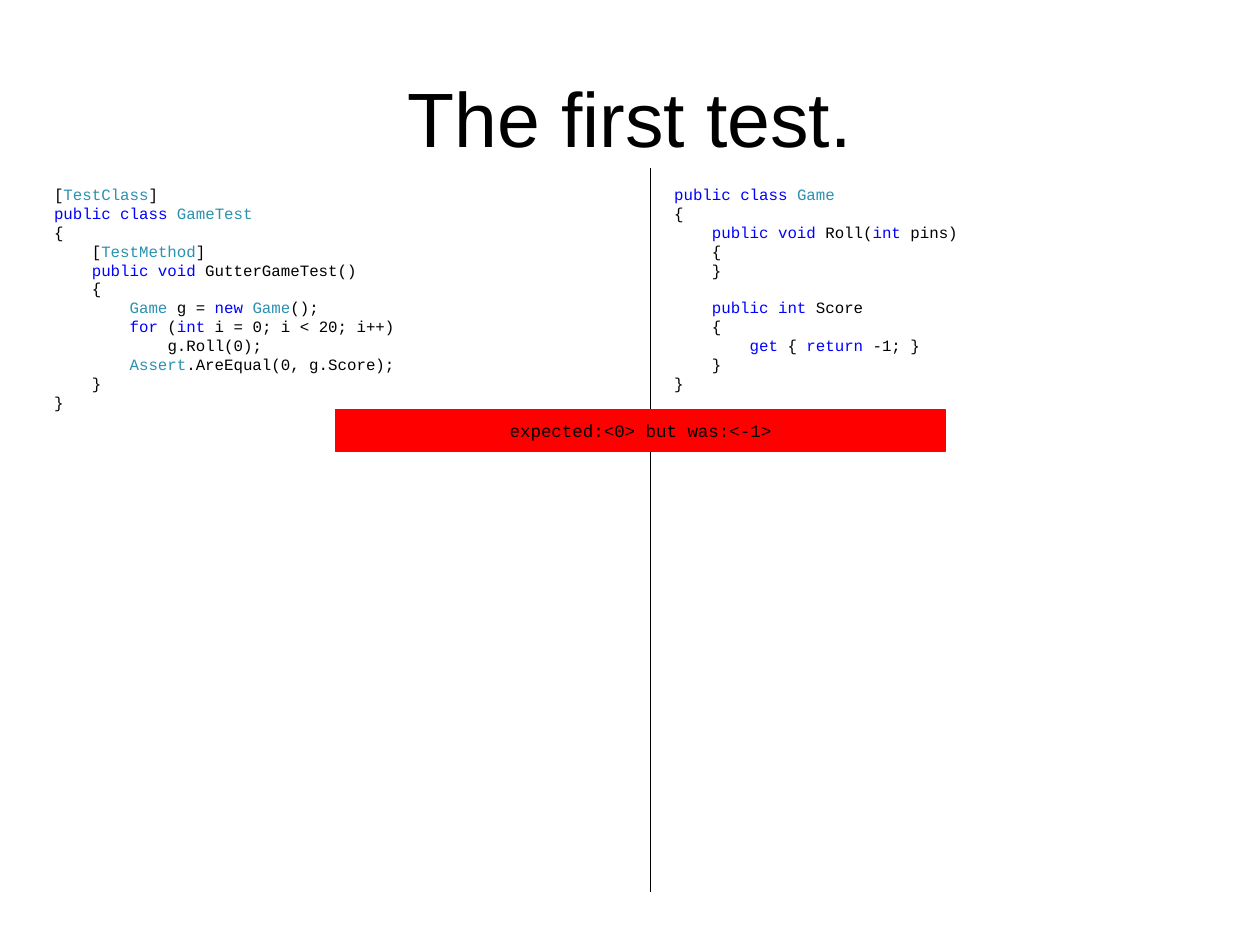
from lxml.etree import SubElement
from pptx import Presentation
from pptx.dml.color import RGBColor
from pptx.enum.shapes import MSO_CONNECTOR, MSO_SHAPE
from pptx.enum.text import MSO_ANCHOR, PP_ALIGN
from pptx.oxml.ns import qn
from pptx.util import Cm, Pt

COLORS = {"text": "000000", "keyword": "0000FF", "type": "2B91AF", "fail": "FF0000"}
KINDS = dict.fromkeys(["public", "class", "void", "int", "new", "for", "get", "return"], "keyword")
KINDS.update(dict.fromkeys(["TestClass", "GameTest", "TestMethod", "Game", "Assert"], "type"))

TEST_CODE = """[|TestClass|]
|public| |class| |GameTest
{
    [|TestMethod|]
    |public| |void| GutterGameTest()
    {
        |Game| g = |new| |Game|();
        |for| (|int| i = 0; i < 20; i++)
            g.Roll(0);
        |Assert|.AreEqual(0, g.Score);
    }
}"""
GAME_CODE = """public| |class| |Game
{
    |public| |void| Roll(|int| pins)
    {
    }

    |public| |int| Score
    {
        |get| { |return| -1; }
    }
}"""
LINE_PITCH = Pt(10.8)


def add_run(p, text, font, size, color="text"):
    r = p.add_run()
    r.text = text
    r.font.name = font
    r.font.size = Pt(size)
    r.font.color.rgb = RGBColor.from_string(COLORS[color])


prs = Presentation()
prs.slide_width, prs.slide_height = Cm(25.4), Cm(19.05)
s = prs.slides.add_slide(prs.slide_layouts[6])

tf = s.shapes.add_textbox(Cm(1.27), Cm(0.76), Cm(22.86), Cm(3.18)).text_frame
tf.word_wrap = True
tf.vertical_anchor = MSO_ANCHOR.MIDDLE
p = tf.paragraphs[0]
p.alignment = PP_ALIGN.CENTER
add_run(p, "The first test.", "Arial", 44)

for left, height, code in [(0.84, 4.87, TEST_CODE), (13.34, 4.5, GAME_CODE)]:
    tf = s.shapes.add_textbox(Cm(left), Cm(3.6), Cm(11.22), Cm(height)).text_frame
    tf.word_wrap = True
    p = tf.paragraphs[0]
    for block_no, block in enumerate(code.split("\n\n")):
        for line_no, line in enumerate(block.split("\n")):
            if block_no or line_no:
                p = tf.add_paragraph()
            p.line_spacing = LINE_PITCH
            if block_no and not line_no:
                p.space_before = LINE_PITCH
            for part in filter(None, line.split("|")):
                add_run(p, part, "Courier New", 9, KINDS.get(part, "text"))

divider = s.shapes.add_connector(MSO_CONNECTOR.STRAIGHT, Cm(13.12), Cm(3.38), Cm(13.12), Cm(17.99))
divider.line.color.rgb = RGBColor.from_string(COLORS["text"])
divider.line.width = Pt(0.75)
SubElement(divider._element.spPr, qn("a:effectLst"))

sp = s.shapes.add_shape(MSO_SHAPE.RECTANGLE, Cm(6.77), Cm(8.26), Cm(12.28), Cm(0.85))
sp.shadow.inherit = False
sp.fill.solid()
sp.fill.fore_color.rgb = RGBColor.from_string(COLORS["fail"])
sp.line.color.rgb = RGBColor.from_string(COLORS["fail"])
sp.line.width = Pt(0.75)
tf = sp.text_frame
tf.word_wrap = False
tf.vertical_anchor = MSO_ANCHOR.MIDDLE
p = tf.paragraphs[0]
p.alignment = PP_ALIGN.CENTER
add_run(p, "expected:<0> but was:<-1>", "Courier New", 10)

prs.save("out.pptx")
